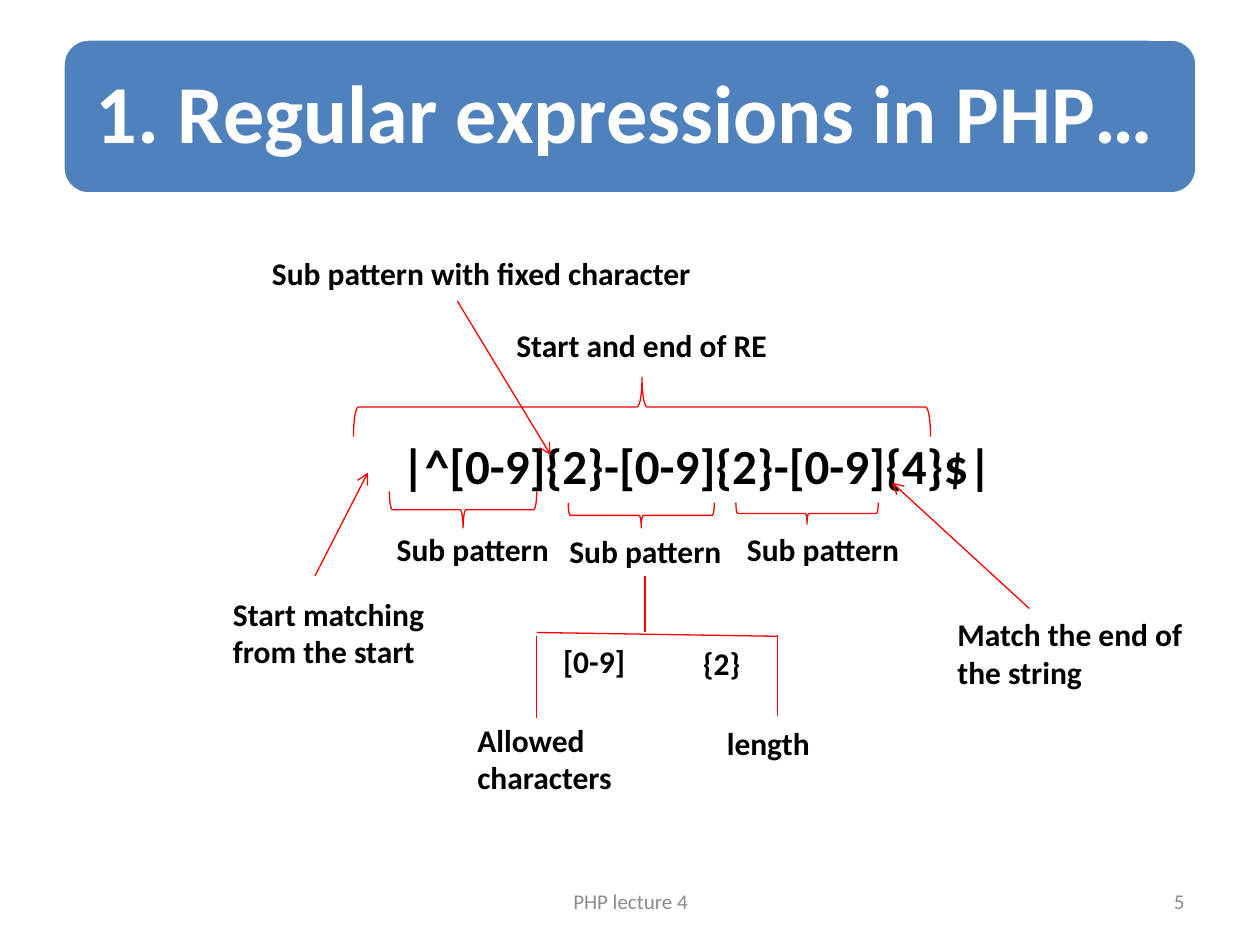
from dataclasses import dataclass
from typing import NamedTuple

from lxml.etree import SubElement
from pptx import Presentation
from pptx.dml.color import RGBColor
from pptx.enum.shapes import MSO_CONNECTOR, MSO_SHAPE
from pptx.enum.text import MSO_ANCHOR, PP_ALIGN
from pptx.oxml.ns import qn
from pptx.util import Emu, Pt

PX = 9144  # 100 px to the inch


@dataclass(frozen=True)
class Theme:
    font: str = "Calibri"
    blue: str = "4F81BD"
    white: str = "FFFFFF"
    black: str = "000000"
    red: str = "FF0000"
    grey: str = "8C8C8C"
    title: int = 47
    pattern: int = 28
    label: int = 18
    footer: int = 12
    thin: float = 0.75


THEME = Theme()


class Box(NamedTuple):
    left: int
    top: int
    width: int
    height: int


class Label(NamedTuple):
    text: str
    box: Box
    size: int = THEME.label
    color: str = THEME.black
    bold: bool = True
    align: PP_ALIGN = PP_ALIGN.LEFT
    anchor: MSO_ANCHOR = MSO_ANCHOR.TOP


class Brace(NamedTuple):
    kind: MSO_SHAPE
    box: Box  # before rotation
    rotation: int


class Line(NamedTuple):
    x1: int
    y1: int
    x2: int
    y2: int
    arrow: bool = False


def px(*lengths: int) -> list[Emu]:
    return [Emu(n * PX) for n in lengths]


def rgb(color: str) -> RGBColor:
    return RGBColor.from_string(color)


def set_line(shape, color: str, width: float) -> None:
    shape.line.color.rgb = rgb(color)
    shape.line.width = Pt(width)


def write(shape, label: Label):
    tf = shape.text_frame
    tf.word_wrap = True
    tf.vertical_anchor = label.anchor
    p = tf.paragraphs[0]
    p.alignment = label.align
    r = p.add_run()
    r.text = label.text
    style = {"name": THEME.font, "size": Pt(label.size), "bold": label.bold}
    for name, value in style.items():
        setattr(r.font, name, value)
    r.font.color.rgb = rgb(label.color)
    return tf


def add_label(s, label: Label) -> None:
    write(s.shapes.add_textbox(*px(*label.box)), label)


def add_title(s, label: Label) -> None:
    sp = s.shapes.add_shape(MSO_SHAPE.ROUNDED_RECTANGLE, *px(*label.box))
    sp.shadow.inherit = False
    sp.fill.solid()
    sp.fill.fore_color.rgb = rgb(THEME.blue)
    set_line(sp, THEME.white, 2)
    tf = write(sp, label)
    tf.paragraphs[0].line_spacing = 0.9
    for side in ("left", "right", "top", "bottom"):
        setattr(tf, f"margin_{side}", px(20)[0])


def add_brace(s, brace: Brace) -> None:
    sp = s.shapes.add_shape(brace.kind, *px(*brace.box))
    sp.shadow.inherit = False
    sp.fill.background()
    sp.rotation = brace.rotation
    set_line(sp, THEME.red, THEME.thin)


def add_line(s, line: Line) -> None:
    c = s.shapes.add_connector(
        MSO_CONNECTOR.STRAIGHT, *px(line.x1, line.y1, line.x2, line.y2))
    set_line(c, THEME.red, THEME.thin)
    if line.arrow:
        SubElement(c.line._get_or_add_ln(), qn("a:tailEnd"), type="arrow")
    SubElement(c._element.spPr, qn("a:effectLst"))


TITLE = Label("1. Regular expressions in PHP…", Box(50, 31, 900, 123),
              THEME.title, THEME.white, anchor=MSO_ANCHOR.MIDDLE)

LABELS = [
    Label("|^[0-9]{2}-[0-9]{2}-[0-9]{4}$|", Box(309, 341, 520, 58), THEME.pattern),
    Label("Sub pattern with fixed character", Box(206, 197, 361, 40)),
    Label("Start and end of RE", Box(400, 254, 296, 40)),
    *(Label("Sub pattern", Box(left, top, 142, 40))
      for left, top in ((305, 416), (442, 417), (583, 416))),
    Label("Start matching from the start", Box(175, 467, 225, 71)),
    Label("Match the end of the string", Box(750, 483, 200, 71)),
    Label("[0-9]", Box(437, 505, 72, 40)),
    Label("{2}", Box(548, 506, 68, 40)),
    Label("Allowed characters", Box(369, 567, 140, 71)),
    Label("length", Box(567, 570, 108, 40)),
    Label("PHP lecture 4", Box(342, 695, 317, 40), THEME.footer, THEME.grey,
          False, PP_ALIGN.CENTER, MSO_ANCHOR.MIDDLE),
    Label("5", Box(717, 695, 233, 40), THEME.footer, THEME.grey,
          False, PP_ALIGN.RIGHT, MSO_ANCHOR.MIDDLE),
]

BRACES = [
    Brace(MSO_SHAPE.LEFT_BRACE, Box(486, 94, 47, 458), 90),
    Brace(MSO_SHAPE.RIGHT_BRACE, Box(353, 346, 29, 117), 90),
    Brace(MSO_SHAPE.LEFT_BRACE, Box(499, 351, 20, 116), 270),
    Brace(MSO_SHAPE.RIGHT_BRACE, Box(632, 351, 17, 113), 90),
]

LINES = [
    # Pointers into the expression
    Line(250, 457, 292, 375, arrow=True),
    Line(817, 483, 708, 383, arrow=True),
    Line(363, 239, 437, 361, arrow=True),
    # Tree below the middle sub pattern
    Line(512, 457, 512, 502),
    Line(426, 502, 617, 505),
    Line(426, 505, 426, 570),
    Line(617, 504, 617, 568),
]


def main() -> None:
    prs = Presentation()
    prs.slide_width, prs.slide_height = px(1000, 750)
    s = prs.slides.add_slide(prs.slide_layouts[6])
    add_title(s, TITLE)
    for label in LABELS:
        add_label(s, label)
    for brace in BRACES:
        add_brace(s, brace)
    for line in LINES:
        add_line(s, line)
    prs.save("out.pptx")


if __name__ == "__main__":
    main()
